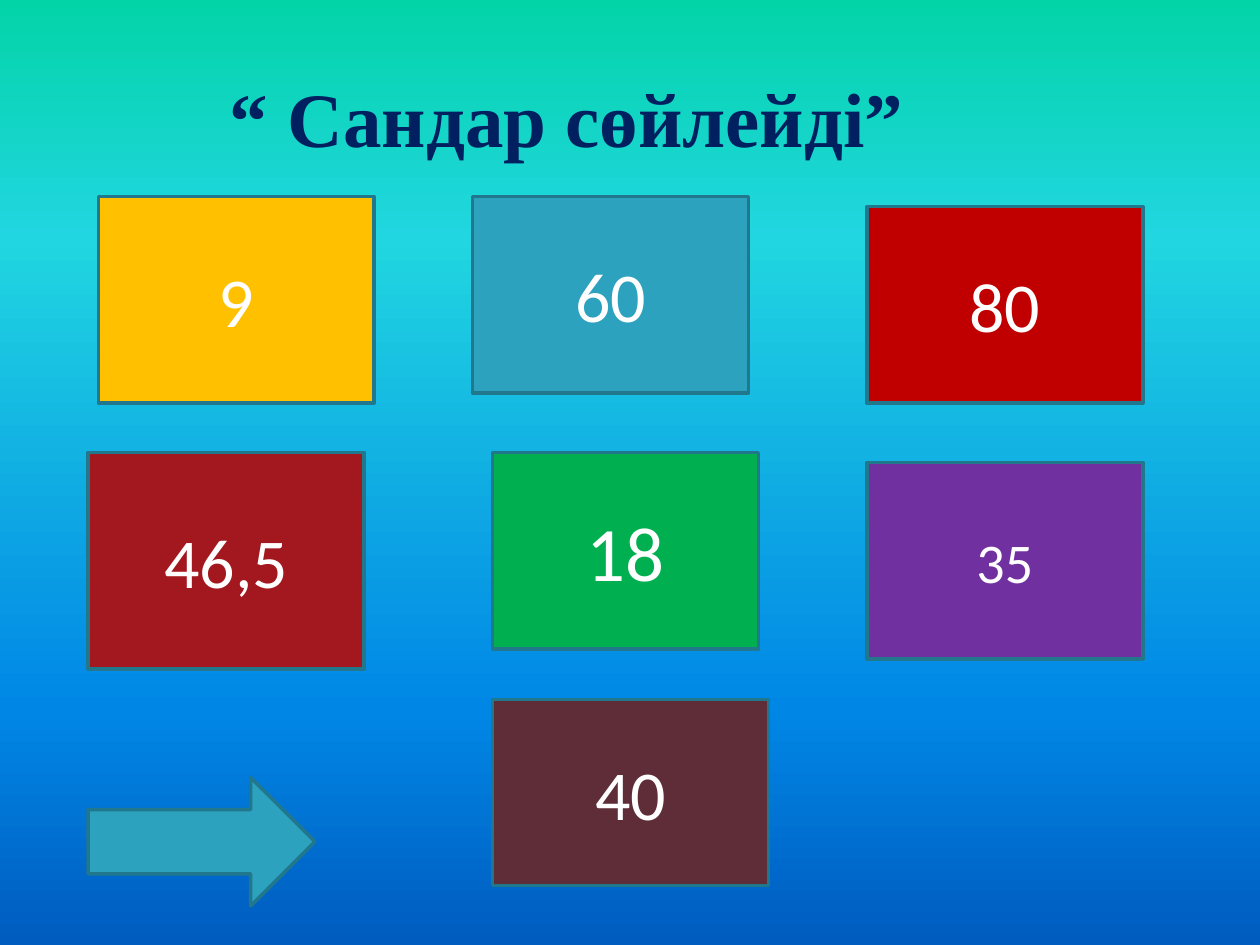
"""Build the "Numbers speak" slide: a title, seven coloured number cards and an arrow."""
import lxml.etree
import pptx
import pptx.dml.color
import pptx.enum.shapes
import pptx.enum.text
import pptx.oxml.ns
import pptx.util

Inches = pptx.util.Inches
RGBColor = pptx.dml.color.RGBColor
MSO_SHAPE = pptx.enum.shapes.MSO_SHAPE

WHITE = RGBColor(0xFF, 0xFF, 0xFF)
NAVY = RGBColor(0x00, 0x20, 0x60)
OUTLINE = RGBColor(0x21, 0x78, 0x8D)
TEAL = RGBColor(0x2D, 0xA2, 0xBF)
AMBER = RGBColor(0xFF, 0xC0, 0x00)
RED = RGBColor(0xC0, 0x00, 0x00)
CRIMSON = RGBColor(0xA3, 0x17, 0x1E)
GREEN = RGBColor(0x00, 0xB0, 0x50)
PURPLE = RGBColor(0x70, 0x30, 0xA0)
MAROON = RGBColor(0x5E, 0x2D, 0x37)
SKY_STOPS = (
    (0, RGBColor(0x03, 0xD4, 0xA8)),
    (25, RGBColor(0x21, 0xD6, 0xE0)),
    (75, RGBColor(0x00, 0x87, 0xE6)),
    (100, RGBColor(0x00, 0x5C, 0xBF)),
)

CARDS = (
    ("9", AMBER, 40, (0.78, 1.56, 2.19, 1.64)),
    ("60", TEAL, 40, (3.75, 1.56, 2.19, 1.56)),
    ("80", RED, 40, (6.88, 1.64, 2.19, 1.56)),
    ("46,5", CRIMSON, 40, (0.7, 3.59, 2.19, 1.72)),
    ("18", GREEN, 44, (3.91, 3.59, 2.11, 1.56)),
    ("35", PURPLE, 32, (6.88, 3.67, 2.19, 1.56)),
    ("40", MAROON, 40, (3.91, 5.55, 2.19, 1.48)),
)


def paint_background(slide):
    """Fill the background with the vertical sky gradient."""
    sky = slide.background.fill
    sky.gradient()
    sky.gradient_angle = 270
    qn = pptx.oxml.ns.qn
    stops = next(slide.element.iter(qn("a:gsLst")))
    for stop in list(stops):
        stops.remove(stop)
    for percent, color in SKY_STOPS:
        stop = lxml.etree.SubElement(stops, qn("a:gs"), pos=str(percent * 1000))
        lxml.etree.SubElement(stop, qn("a:srgbClr"), val=str(color))


def write_centred(frame, text, size, font, color, bold=False):
    """Write one centred line in the middle of a text frame."""
    frame.word_wrap = True
    frame.vertical_anchor = pptx.enum.text.MSO_ANCHOR.MIDDLE
    line = frame.paragraphs[0]
    line.alignment = pptx.enum.text.PP_ALIGN.CENTER
    run = line.add_run()
    run.text = text
    run.font.size = pptx.util.Pt(size)
    run.font.name = font
    run.font.bold = bold
    run.font.color.rgb = color


def add_outlined(slide, preset, box, color):
    """Add a filled shape with the common outline."""
    figure = slide.shapes.add_shape(preset, *map(Inches, box))
    figure.shadow.inherit = False
    figure.fill.solid()
    figure.fill.fore_color.rgb = color
    figure.line.color.rgb = OUTLINE
    figure.line.width = pptx.util.Pt(2)
    return figure


def add_card(slide, number, color, size, box):
    """Add a coloured card showing a number."""
    card = add_outlined(slide, MSO_SHAPE.RECTANGLE, box, color)
    write_centred(card.text_frame, number, size, "Calibri", WHITE)


def add_title(slide, text):
    """Add the slide heading."""
    heading = slide.shapes.add_textbox(Inches(0), Inches(0.3), Inches(9), Inches(1.25))
    write_centred(heading.text_frame, text, 44, "Times New Roman", NAVY, bold=True)


def main():
    """Build and save the slide."""
    deck = pptx.Presentation()
    deck.slide_width, deck.slide_height = Inches(10), Inches(7.5)
    slide = deck.slides.add_slide(deck.slide_layouts[6])
    paint_background(slide)
    for card in CARDS:
        add_card(slide, *card)
    add_title(slide, "“ Сандар сөйлейді”")
    add_outlined(slide, MSO_SHAPE.RIGHT_ARROW, (0.7, 6.17, 1.8, 1.02), TEAL)
    deck.save("out.pptx")


if __name__ == "__main__":
    main()
